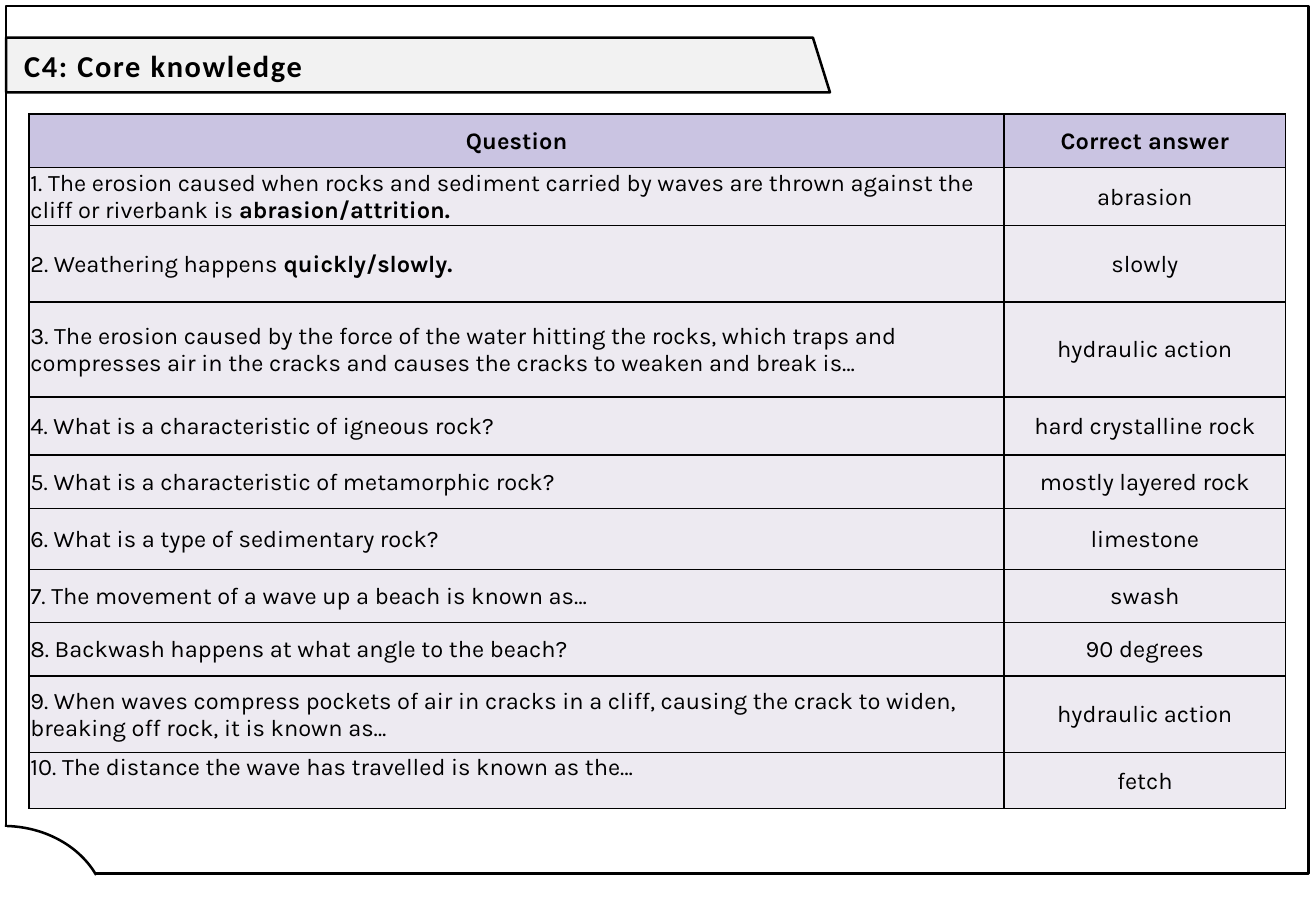
from lxml import etree
from pptx import Presentation
from pptx import util as u
from pptx.dml.color import RGBColor
from pptx.enum import shapes, text
from pptx.oxml import ns

BLACK = RGBColor(0x00, 0x00, 0x00)
WHITE = RGBColor(0xFF, 0xFF, 0xFF)
BANNER_GREY = RGBColor(0xF2, 0xF2, 0xF2)
HEADER_LILAC = RGBColor(0xCA, 0xC4, 0xE2)
BODY_LILAC = RGBColor(0xED, 0xEA, 0xF1)

SLIDE_WIDTH, SLIDE_HEIGHT = 10.83, 7.5
FRAME = (0.05, 0.05, 10.72, 7.14)
BANNER = (0.05, 0.31, 6.78, 0.45)
QUIZ = (0.24, 0.94, 10.34, 5.7)
ANSWER_SHARE = 0.224
ROW_HEIGHTS = [0.44, 0.46, 0.63, 0.78, 0.48, 0.44, 0.5, 0.44, 0.44, 0.63, 0.46]

HEADINGS = ("Question", "Correct answer")
QUESTIONS = [
    ("1. The erosion caused when rocks and sediment carried by waves are thrown "
     "against the cliff or riverbank is ", "abrasion/attrition.", "abrasion"),
    ("2. Weathering happens ", "quickly/slowly.", "slowly"),
    ("3. The erosion caused by the force of the water hitting the rocks, which traps "
     "and compresses air in the cracks and causes the cracks to weaken and break is…",
     "", "hydraulic action"),
    ("4. What is a characteristic of igneous rock?", "", "hard crystalline rock"),
    ("5. What is a characteristic of metamorphic rock?", "", "mostly layered rock"),
    ("6. What is a type of sedimentary rock?", "", "limestone"),
    ("7. The movement of a wave up a beach is known as…", "", "swash"),
    ("8. Backwash happens at what angle to the beach?", "", "90 degrees"),
    ("9. When waves compress pockets of air in cracks in a cliff, causing the crack "
     "to widen, breaking off rock, it is known as…", "", "hydraulic action"),
    ("10. The distance the wave has travelled is known as the…", "", "fetch"),
]


def inches(*lengths):
    """Convert several lengths to slide units."""
    return [u.Inches(length) for length in lengths]


def paint(outline, fill=None, line=BLACK):
    """Give a shape its fill and outline, without a shadow."""
    outline.shadow.inherit = False
    if fill is None:
        outline.fill.background()
    else:
        outline.fill.solid()
        outline.fill.fore_color.rgb = fill
    if line is None:
        outline.line.fill.background()
    else:
        outline.line.color.rgb = line
        outline.line.width = u.Pt(1.5)


def add_run(paragraph, words, font_name, size, bold):
    """Append one run of black text and return it."""
    run = paragraph.add_run()
    run.text = words
    run.font.name = font_name
    run.font.size = u.Pt(size)
    run.font.bold = bold
    run.font.color.rgb = BLACK
    return run


def add_banner(slide, box):
    """Draw the slanted title banner and its heading."""
    left, top, width, height = box
    right, bottom = left + width, top + height
    builder = slide.shapes.build_freeform(*inches(left, top), scale=1.0)
    builder.add_line_segments(
        [inches(right - 0.14, top), inches(right, bottom), inches(left, bottom)], close=True)
    paint(builder.convert_to_shape(), BANNER_GREY)

    heading = slide.shapes.add_textbox(
        *inches(left + 0.05, top - 0.1, width - 0.35, height + 0.18)).text_frame
    heading.word_wrap = True
    heading.vertical_anchor = text.MSO_ANCHOR.MIDDLE
    paragraph = heading.paragraphs[0]
    paragraph.line_spacing = 1.07
    paragraph.space_after = u.Pt(8)
    run = add_run(paragraph, "C4: Core knowledge", "Calibri", 18, True)
    run.font._element.set("spc", "100")


def add_frame(slide, box):
    """Draw the page frame with its rounded cut-out at the lower left."""
    left, top, width, height = box
    bottom = top + height
    paint(slide.shapes.add_shape(shapes.MSO_SHAPE.RECTANGLE, *inches(*box)))
    cutout = slide.shapes.add_shape(
        shapes.MSO_SHAPE.ARC, *inches(left - 0.87, bottom - 0.39, 1.7, 1.45))
    cutout.adjustments[0] = 162.525
    cutout.adjustments[1] = 202.265
    paint(cutout, WHITE)
    edge_mask = slide.shapes.add_shape(
        shapes.MSO_SHAPE.RECTANGLE, *inches(left - 0.04, bottom - 0.38, 0.05, 0.1))
    paint(edge_mask, WHITE, None)


def style_cell(cell, fill):
    """Set the margins, borders and fill of a table cell."""
    cell.margin_left = cell.margin_right = cell.margin_top = u.Inches(0.01)
    cell.margin_bottom = 0
    cell.vertical_anchor = text.MSO_ANCHOR.MIDDLE
    properties = cell._tc.get_or_add_tcPr()
    for side in ("a:lnL", "a:lnR", "a:lnT", "a:lnB"):
        border = etree.SubElement(properties, ns.qn(side), w=str(u.Pt(1)))
        border_fill = etree.SubElement(border, ns.qn("a:solidFill"))
        etree.SubElement(border_fill, ns.qn("a:srgbClr"), val=str(BLACK))
    cell.fill.solid()
    cell.fill.fore_color.rgb = fill


def fill_cell(cell, runs, fill, centred):
    """Write (words, bold) runs into a styled cell."""
    style_cell(cell, fill)
    paragraph = cell.text_frame.paragraphs[0]
    paragraph.alignment = text.PP_ALIGN.CENTER if centred else text.PP_ALIGN.LEFT
    for words, bold in runs:
        if words:
            add_run(paragraph, words, "Karla", 14, bold)


def add_quiz(slide, box):
    """Build the table of questions and correct answers."""
    quiz = slide.shapes.add_table(len(QUESTIONS) + 1, len(HEADINGS), *inches(*box)).table
    answer_width = box[2] * ANSWER_SHARE
    quiz.columns[0].width, quiz.columns[1].width = inches(box[2] - answer_width, answer_width)
    for row, height in zip(quiz.rows, ROW_HEIGHTS):
        row.height = u.Inches(height)
    for column, heading in enumerate(HEADINGS):
        fill_cell(quiz.cell(0, column), [(heading, True)], HEADER_LILAC, True)
    for row, (question, choices, answer) in enumerate(QUESTIONS, start=1):
        fill_cell(quiz.cell(row, 0), [(question, False), (choices, True)], BODY_LILAC, False)
        fill_cell(quiz.cell(row, 1), [(answer, False)], BODY_LILAC, True)
    quiz.cell(len(QUESTIONS), 0).vertical_anchor = text.MSO_ANCHOR.TOP


def main():
    """Build and save the core knowledge slide."""
    deck = Presentation()
    deck.slide_width, deck.slide_height = inches(SLIDE_WIDTH, SLIDE_HEIGHT)
    slide = deck.slides.add_slide(deck.slide_layouts[6])
    add_frame(slide, FRAME)
    add_banner(slide, BANNER)
    add_quiz(slide, QUIZ)
    deck.save("out.pptx")


if __name__ == "__main__":
    main()
